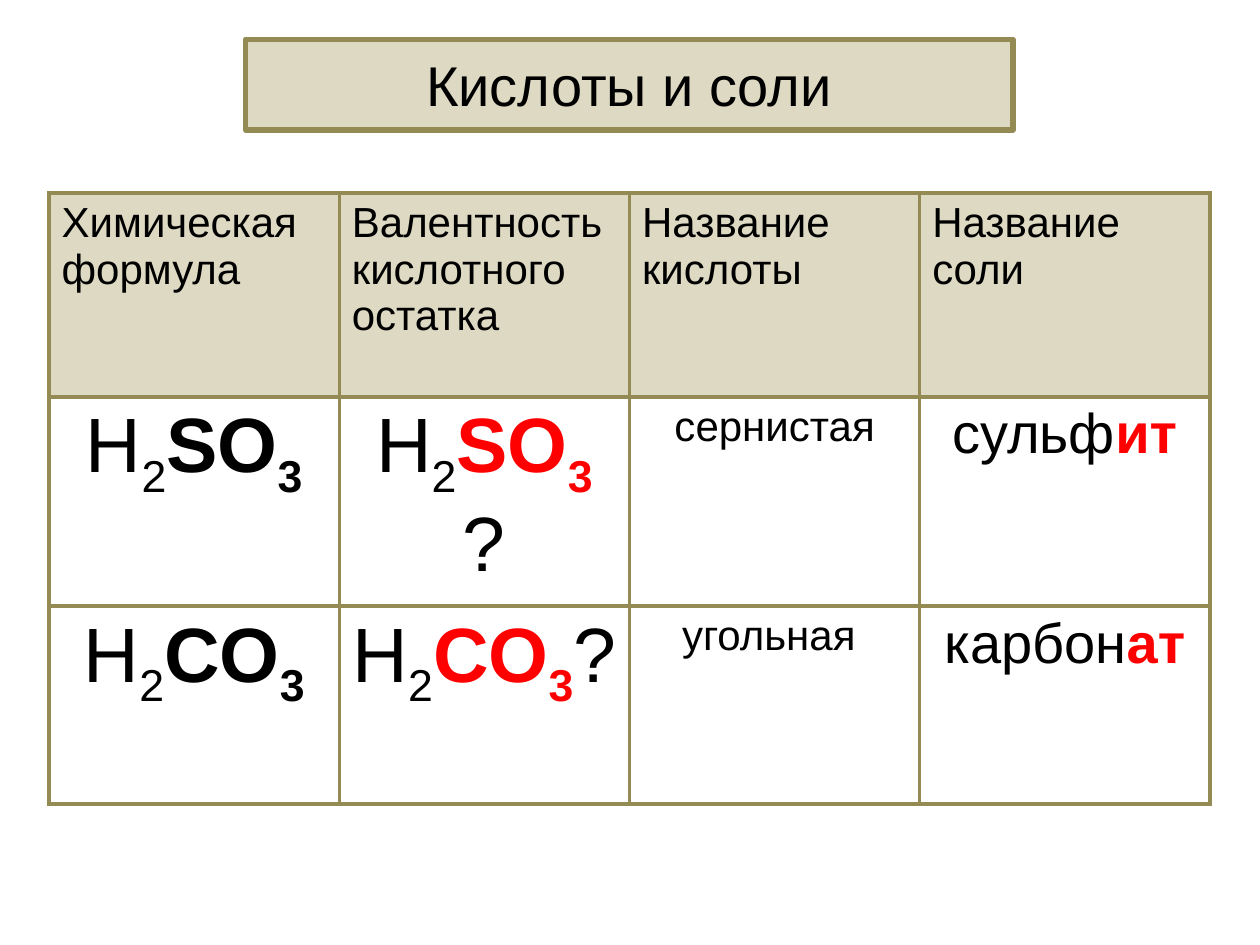
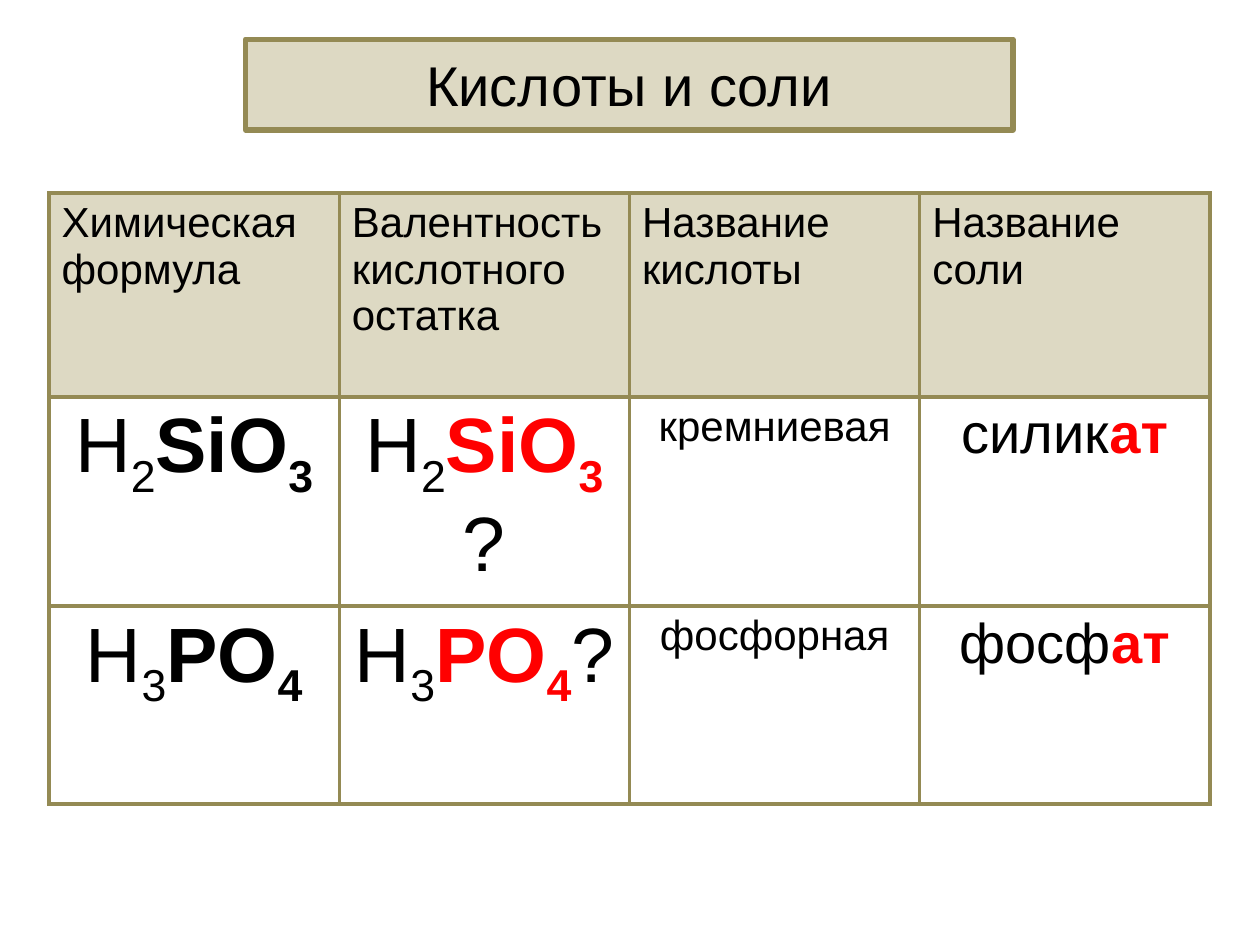
from lxml.etree import SubElement
from pptx import Presentation
from pptx.dml.color import RGBColor
from pptx.enum.text import MSO_ANCHOR, MSO_AUTO_SIZE, PP_ALIGN
from pptx.oxml.ns import qn
from pptx.util import Cm, Pt

TITLE = "Кислоты и соли"
HEADINGS = [
    "Химическая формула",
    "Валентность кислотного остатка",
    "Название кислоты",
    "Название соли",
]
SLIDES = [
    [
        {"hydrogen": "2", "residue": "SO", "oxygen": "3", "new_line": True,
         "acid": "сернистая", "salt": ("сульф", "ит")},
        {"hydrogen": "2", "residue": "CO", "oxygen": "3", "new_line": False,
         "acid": "угольная ", "salt": ("карбон", "ат")},
    ],
    [
        {"hydrogen": "2", "residue": "SiO", "oxygen": "3", "new_line": False,
         "acid": "кремниевая", "salt": ("силик", "ат")},
        {"hydrogen": "3", "residue": "PO", "oxygen": "4", "new_line": False,
         "acid": "фосфорная", "salt": ("фосф", "ат")},
    ],
]

COLORS = {"band": "DDD9C3", "border": "948A54", "text": "000000", "accent": "FF0000"}
FONT = "Arial"
FORMULA_SIZE, LARGE_SIZE, SMALL_SIZE = 44, 32, 24
TITLE_BOX = (Cm(4.95), Cm(0.79), Cm(15.47), Cm(1.83))
TABLE_LEFT, TABLE_TOP, COLUMN_WIDTH = Cm(0.99), Cm(3.89), Cm(5.85)
ROW_HEIGHTS = [Cm(4.11), Cm(4.22), Cm(3.99)]


def color(name):
    return RGBColor.from_string(COLORS[name])


def add_span(para, text, size=SMALL_SIZE, shade="text", bold=False, subscript=False):
    span = para.add_run()
    span.text = text
    span.font.name = FONT
    span.font.size = Pt(size)
    span.font.bold = bold
    span.font.color.rgb = color(shade)
    if subscript:
        span._r.get_or_add_rPr().set("baseline", "-25000")


def centred(para):
    para.alignment = PP_ALIGN.CENTER
    return para


def add_formula(para, acid, shade="text"):
    add_span(para, "H", size=FORMULA_SIZE)
    add_span(para, acid["hydrogen"], size=FORMULA_SIZE, subscript=True)
    add_span(para, acid["residue"], size=FORMULA_SIZE, shade=shade, bold=True)
    add_span(para, acid["oxygen"], size=FORMULA_SIZE, shade=shade, bold=True, subscript=True)


def set_borders(cell):
    properties = cell._tc.get_or_add_tcPr()
    for side in ("lnL", "lnR", "lnT", "lnB"):
        line = SubElement(properties, qn(f"a:{side}"), w=str(Pt(2.25)))
        fill = SubElement(line, qn("a:solidFill"))
        SubElement(fill, qn("a:srgbClr"), val=COLORS["border"])


def add_title(slide):
    box = slide.shapes.title
    box.left, box.top, box.width, box.height = TITLE_BOX
    box.fill.solid()
    box.fill.fore_color.rgb = color("band")
    box.line.color.rgb = color("border")
    box.line.width = Pt(3)
    frame = box.text_frame
    frame.auto_size = MSO_AUTO_SIZE.NONE
    frame.vertical_anchor = MSO_ANCHOR.MIDDLE
    add_span(centred(frame.paragraphs[0]), TITLE, size=LARGE_SIZE)


def fill_row(cells, acid):
    formula, valence, name, salt = [centred(cell.text_frame.paragraphs[0]) for cell in cells]
    add_formula(formula, acid)
    add_formula(valence, acid, shade="accent")
    if acid["new_line"]:
        valence = centred(cells[1].text_frame.add_paragraph())
    add_span(valence, "?", size=FORMULA_SIZE)
    add_span(name, acid["acid"])
    stem, ending = acid["salt"]
    add_span(salt, stem, size=LARGE_SIZE)
    add_span(salt, ending, size=LARGE_SIZE, shade="accent", bold=True)


def add_acid_table(slide, acids):
    table = slide.shapes.add_table(
        len(acids) + 1, len(HEADINGS), TABLE_LEFT, TABLE_TOP,
        COLUMN_WIDTH * len(HEADINGS), sum(ROW_HEIGHTS),
    ).table
    table.first_row = table.horz_banding = False
    for column in table.columns:
        column.width = COLUMN_WIDTH
    for row, height in zip(table.rows, ROW_HEIGHTS):
        row.height = height
    for cell in table.iter_cells():
        set_borders(cell)
        cell.fill.background()

    header, *body = [list(row.cells) for row in table.rows]
    for cell, heading in zip(header, HEADINGS):
        cell.fill.solid()
        cell.fill.fore_color.rgb = color("band")
        add_span(cell.text_frame.paragraphs[0], heading)
    for cells, acid in zip(body, acids):
        fill_row(cells, acid)


def main():
    deck = Presentation()
    deck.slide_width, deck.slide_height = Cm(25.4), Cm(19.05)
    title_only = deck.slide_layouts[5]
    for acids in SLIDES:
        slide = deck.slides.add_slide(title_only)
        add_title(slide)
        add_acid_table(slide, acids)
    deck.save("out.pptx")


if __name__ == "__main__":
    main()
